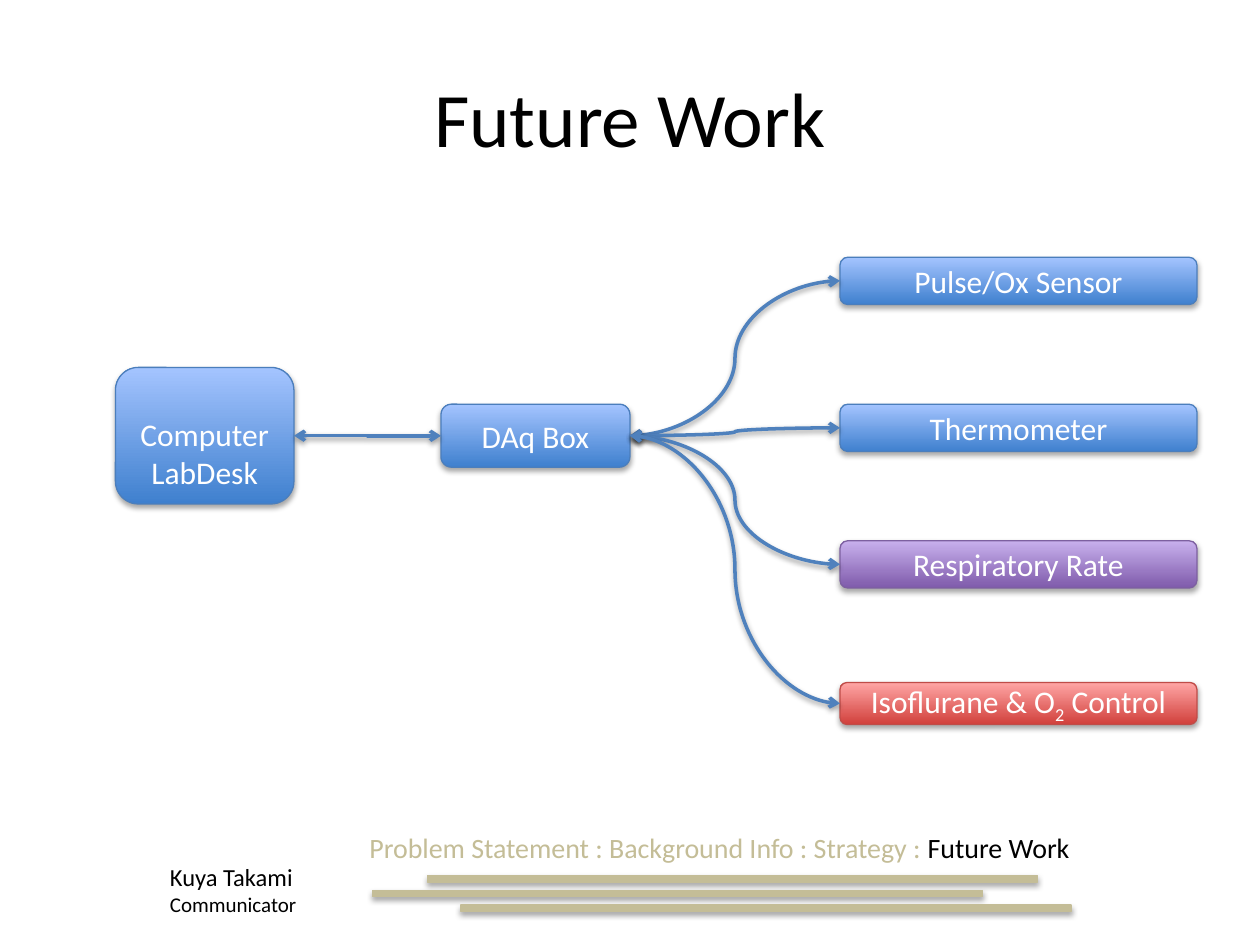
from lxml.etree import SubElement
from pptx import Presentation
from pptx.dml.color import RGBColor
from pptx.enum.shapes import MSO_CONNECTOR as CONN, MSO_SHAPE as SHAPE
from pptx.enum.text import MSO_ANCHOR as ANCHOR, MSO_AUTO_SIZE as AUTO, PP_ALIGN as ALIGN
from pptx.oxml.ns import qn
from pptx.util import Inches, Pt

FONT = "Calibri"
BLUE = ("3F80CE", "A4C4FF", "4B7EBC")
PURPLE = ("7F5BAB", "C8B0ED", "7D60A0")
RED = ("D1403C", "FFA6A5", "BF4C48")
TAN, BLACK, WHITE, LINK = "C4BD97", "000000", "FFFFFF", "4F81BD"
TOP, LEFT, BOTTOM, RIGHT = range(4)


def rgb(value):
    return RGBColor.from_string(value)


def grid(*cells):
    return [Inches(c / 12) for c in cells]


def style(run, size, color):
    run.font.name = FONT
    run.font.size = Pt(size)
    run.font.color.rgb = rgb(color)


def add_shadow(sp, alpha, dist):
    effects = SubElement(sp._element.spPr, qn("a:effectLst"))
    shadow = SubElement(effects, qn("a:outerShdw"), blurRad="40000", dist=str(dist),
                        dir="5400000", rotWithShape="0")
    color = SubElement(shadow, qn("a:srgbClr"), val=BLACK)
    SubElement(color, qn("a:alpha"), val=str(alpha * 1000))


def add_bar(s, col, row):
    sp = s.shapes.add_shape(SHAPE.RECTANGLE, *grid(col, row, 58.1, 0.6))
    sp.fill.solid()
    sp.fill.fore_color.rgb = rgb(TAN)
    sp.line.color.rgb = rgb(TAN)
    sp.line.width = Pt(0.75)
    add_shadow(sp, 35, 23000)


def add_node(s, text, cells, colors=BLUE, anchor=ANCHOR.MIDDLE):
    sp = s.shapes.add_shape(SHAPE.FLOWCHART_ALTERNATE_PROCESS, *grid(*cells))
    sp.fill.gradient()
    sp.fill.gradient_angle = 90
    for stop, color, position in zip(sp.fill.gradient_stops, colors, (0, 1)):
        stop.color.rgb = rgb(color)
        stop.position = position
    sp.line.color.rgb = rgb(colors[2])
    sp.line.width = Pt(0.75)
    add_shadow(sp, 35, 23000)
    tf = sp.text_frame
    tf.text = text
    tf.vertical_anchor = anchor
    for p in tf.paragraphs:
        p.alignment = ALIGN.CENTER
        for r in p.runs:
            style(r, 18, WHITE)
    return sp


def add_subscript(sp, sub, rest):
    p = sp.text_frame.paragraphs[0]
    for text in (sub, rest):
        r = p.add_run()
        r.text = text
        style(r, 18, WHITE)
    p.runs[1]._r.get_or_add_rPr().set("baseline", "-25000")


def add_link(s, start, end, kind=CONN.CURVE):
    cx = s.shapes.add_connector(kind, 0, 0, 0, 0)
    cx.begin_connect(start, RIGHT)
    cx.end_connect(end, LEFT)
    cx.line.color.rgb = rgb(LINK)
    cx.line.width = Pt(2)
    ln = cx.line._get_or_add_ln()
    for tag in ("a:headEnd", "a:tailEnd"):
        SubElement(ln, qn(tag), type="arrow")
    add_shadow(cx, 38, 20000)


def add_text(s, cells, lines):
    tf = s.shapes.add_textbox(*grid(*cells)).text_frame
    tf.word_wrap = True
    tf.auto_size = AUTO.SHAPE_TO_FIT_TEXT
    for i, line in enumerate(lines):
        p = tf.add_paragraph() if i else tf.paragraphs[0]
        for text, size, color in line:
            r = p.add_run()
            r.text = text
            style(r, size, color)


def add_title(s, text):
    title = s.shapes.title
    title.left, title.top, title.width, title.height = grid(6, 3.6, 108, 15)
    tf = title.text_frame
    tf.text = text
    tf.vertical_anchor = ANCHOR.MIDDLE
    p = tf.paragraphs[0]
    p.alignment = ALIGN.CENTER
    style(p.runs[0], 44, BLACK)


def add_footer(s):
    for i, col in enumerate((40.7, 35.5, 43.9)):
        add_bar(s, col, 83.4 + 1.4 * i)
    add_text(s, (34, 78.5, 70, 4.4), [[
        ("Problem Statement : Background Info : Strategy : ", 16, TAN),
        ("Future Work", 16, BLACK)]])
    add_text(s, (15, 81.5, 21, 6.5), [
        [("Kuya Takami", 14, BLACK)],
        [("Communicator", 12, BLACK)]])


def add_diagram(s):
    computer = add_node(s, "Computer\nLabDesk", (11, 35, 17, 13), anchor=ANCHOR.BOTTOM)
    daq = add_node(s, "DAq Box", (42, 38.5, 18, 6))
    add_link(s, computer, daq, CONN.ELBOW)
    devices = [
        ("Pulse/Ox Sensor", 24.5, 4.5, BLUE),
        ("Thermometer", 38.5, 4.5, BLUE),
        ("Respiratory Rate", 51.5, 4.5, PURPLE),
        ("Isoflurane & O", 65, 4, RED),
    ]
    for text, row, rows, colors in devices:
        device = add_node(s, text, (80, row, 34, rows), colors)
        add_link(s, daq, device)
    add_subscript(device, "2", " Control")


def main():
    prs = Presentation()
    prs.slide_width, prs.slide_height = grid(120, 90)
    s = prs.slides.add_slide(prs.slide_layouts[5])
    add_title(s, "Future Work")
    add_footer(s)
    add_diagram(s)
    prs.save("out.pptx")


if __name__ == "__main__":
    main()
